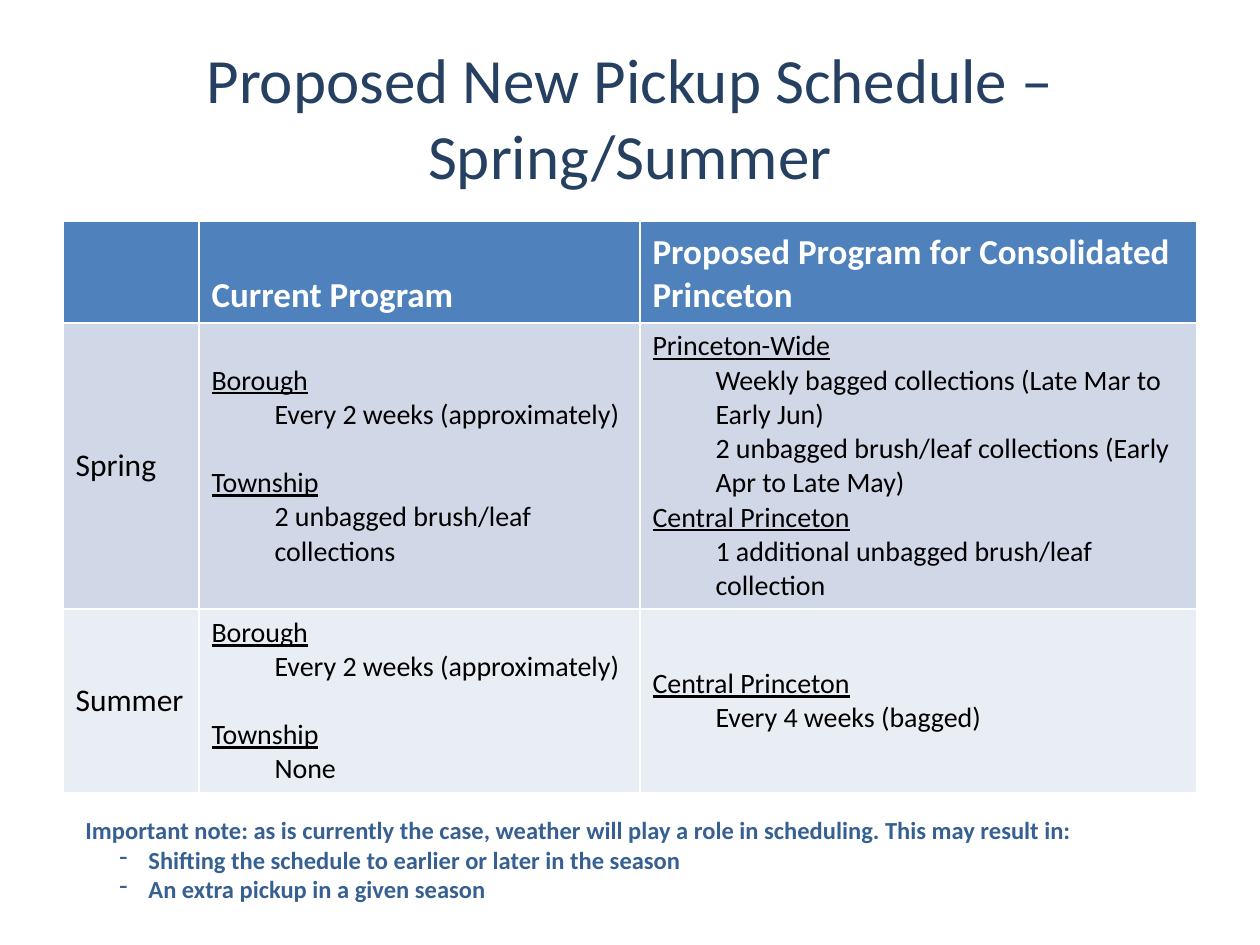
"""Build the spring/summer pickup schedule slide."""
from pptx import Presentation
from pptx.dml.color import RGBColor
from pptx.enum.text import MSO_ANCHOR, PP_ALIGN
from pptx.oxml.ns import qn
from pptx.util import Emu, Pt
from lxml import etree

TOP, MIDDLE, BOTTOM = MSO_ANCHOR.TOP, MSO_ANCHOR.MIDDLE, MSO_ANCHOR.BOTTOM
LEFT, CENTER = PP_ALIGN.LEFT, PP_ALIGN.CENTER

THEME = {
    "font": "Calibri",
    "title": {"size": 36, "color": "254061"},
    "header": {"size": 20, "color": "FFFFFF", "bold": True},
    "season": {"size": 18, "color": "000000"},
    "area": {"size": 16, "color": "000000", "underline": True},
    "service": {"size": 16, "color": "000000", "indent": 63},
    "note": {"size": 14, "color": "376092", "bold": True},
    "effect": {"size": 14, "color": "376092", "bold": True,
               "indent": 63, "hanging": 29, "bullet": "-"},
    "row_fills": ["4F81BD", "D0D8E8", "E9EDF4"],
}
AREA_GAP = 19.5

TITLE = "Proposed New Pickup Schedule – Spring/Summer"
HEADERS = ["", "Current Program", "Proposed Program for Consolidated Princeton"]
SEASONS = [
    ("Spring",
     [("Borough", ["Every 2 weeks (approximately)"]),
      ("Township", ["2 unbagged brush/leaf collections"])],
     [("Princeton-Wide", ["Weekly bagged collections (Late Mar to Early Jun)",
                          "2 unbagged brush/leaf collections (Early Apr to Late May)"]),
      ("Central Princeton", ["1 additional unbagged brush/leaf collection"])]),
    ("Summer",
     [("Borough", ["Every 2 weeks (approximately)"]),
      ("Township", ["None"])],
     [("Central Princeton", ["Every 4 weeks (bagged)"])]),
]
NOTE = "Important note: as is currently the case, weather will play a role in scheduling. This may result in:"
EFFECTS = ["Shifting the schedule to earlier or later in the season",
           "An extra pickup in a given season"]

SLIDE_SIZE = (1260, 945)
TITLE_BOX = (63, 38, 1134, 157)
TABLE_ORIGIN = (63, 221)
COLUMN_WIDTHS = [136, 441, 557]
ROW_HEIGHTS = [102, 286, 184]
NOTE_BOX = (73, 809, 1092, 102)


def px(length):
    return Emu(round(length * 914400 / 126))


def write(frame, lines, align=LEFT):
    """Fill a text frame from (text, style name, space before) lines."""
    for index, (text, style_name, gap) in enumerate(lines):
        style = THEME[style_name]
        paragraph = frame.add_paragraph() if index else frame.paragraphs[0]
        paragraph.alignment, paragraph.space_before = align, Pt(gap)
        if "indent" in style:
            properties = paragraph._p.get_or_add_pPr()
            properties.set("marL", str(px(style["indent"])))
            properties.set("indent", str(-px(style.get("hanging", 0))))
            if "bullet" in style:
                etree.SubElement(properties, qn("a:buChar"), char=style["bullet"])
        run = paragraph.add_run()
        run.text = text
        run.font.color.rgb = RGBColor.from_string(style["color"])
        looks = {"name": THEME["font"], "size": Pt(style["size"]),
                 "bold": style.get("bold", False),
                 "underline": style.get("underline", False)}
        for name, value in looks.items():
            setattr(run.font, name, value)


def program_lines(areas, gap):
    lines = []
    for index, (area, services) in enumerate(areas):
        lines.append((area, "area", gap if index else 0))
        lines += [(service, "service", 0) for service in services]
    return lines


def add_text(slide, box, lines, anchor, align=LEFT):
    frame = slide.shapes.add_textbox(*map(px, box)).text_frame
    frame.word_wrap, frame.vertical_anchor = True, anchor
    write(frame, lines, align)


def add_schedule(slide):
    rows = [[[(header, "header", 0)] if header else [] for header in HEADERS]]
    rows += [[[(season, "season", 0)], program_lines(current, AREA_GAP),
              program_lines(proposed, 0)] for season, current, proposed in SEASONS]
    size = (sum(COLUMN_WIDTHS), sum(ROW_HEIGHTS))
    schedule = slide.shapes.add_table(
        len(rows), len(HEADERS), *map(px, TABLE_ORIGIN + size)).table
    for column, width in zip(schedule.columns, COLUMN_WIDTHS):
        column.width = px(width)
    for row, height, fill, contents in zip(
            schedule.rows, ROW_HEIGHTS, THEME["row_fills"], rows):
        row.height = px(height)
        for cell, lines in zip(row.cells, contents):
            cell.fill.solid()
            cell.fill.fore_color.rgb = RGBColor.from_string(fill)
            cell.vertical_anchor = BOTTOM if contents is rows[0] else MIDDLE
            write(cell.text_frame, lines)


def main():
    deck = Presentation()
    deck.slide_width, deck.slide_height = map(px, SLIDE_SIZE)
    slide = deck.slides.add_slide(deck.slide_layouts[6])
    add_text(slide, TITLE_BOX, [(TITLE, "title", 0)], MIDDLE, CENTER)
    add_schedule(slide)
    note_lines = [(NOTE, "note", 0)] + [(effect, "effect", 0) for effect in EFFECTS]
    add_text(slide, NOTE_BOX, note_lines, TOP)
    deck.save("out.pptx")


if __name__ == "__main__":
    main()
